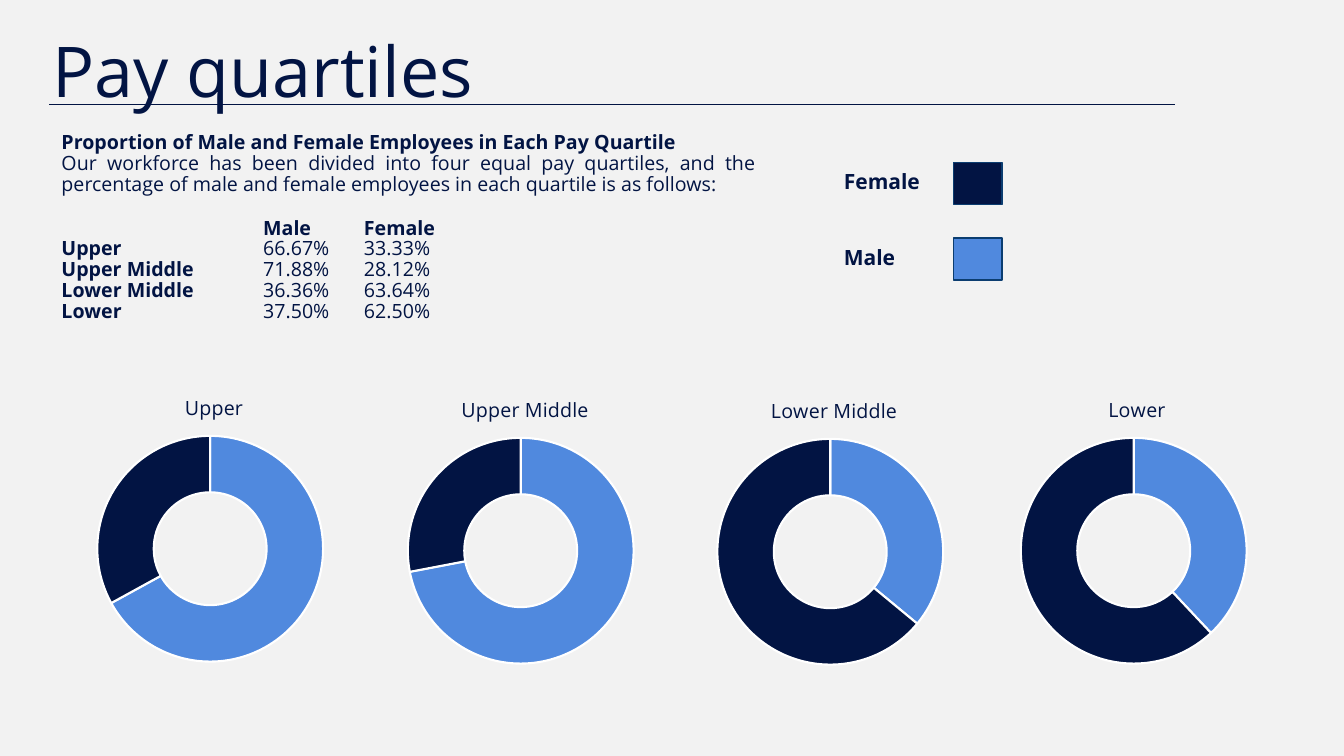
from lxml import etree
from pptx import Presentation
from pptx.chart.data import CategoryChartData
from pptx.dml.color import RGBColor
from pptx.enum.chart import XL_CHART_TYPE
from pptx.enum.shapes import MSO_CONNECTOR, MSO_SHAPE
from pptx.enum.text import MSO_ANCHOR, PP_ALIGN
from pptx.oxml.ns import qn
from pptx.util import Inches, Pt

NAVY = "021443"
BLUE = "5089DE"
FONT = "Open Sans"
CHART_WIDTH, CHART_HEIGHT, RING = 3.43, 3.02, 2.24


def color(value):
    return RGBColor.from_string(value)


def style(font, size, bold=False, name=FONT):
    font.name = name
    font.size = Pt(size)
    font.bold = bold
    font.color.rgb = color(NAVY)


def add_tabs(paragraph, stops):
    tabs = etree.SubElement(paragraph._p.get_or_add_pPr(), qn("a:tabLst"))
    for stop in stops:
        etree.SubElement(tabs, qn("a:tab"), pos=str(Inches(stop)), algn="l")


def add_text(slide, paragraphs, left, top, width, height, size=14, inset=0.12,
             align=PP_ALIGN.LEFT, anchor=MSO_ANCHOR.TOP, spacing=1.0,
             tabs=(), gaps=None):
    frame = slide.shapes.add_textbox(
        Inches(left), Inches(top), Inches(width), Inches(height)).text_frame
    frame.word_wrap = True
    frame.vertical_anchor = anchor
    frame.margin_left = frame.margin_right = Inches(inset)
    frame.margin_top = frame.margin_bottom = Inches(inset)
    for index, runs in enumerate(paragraphs):
        paragraph = frame.paragraphs[0] if index == 0 else frame.add_paragraph()
        if tabs:
            add_tabs(paragraph, tabs)
        paragraph.alignment = align
        paragraph.line_spacing = spacing
        if gaps and index in gaps:
            paragraph.space_before = Pt(gaps[index])
        for words, bold in runs:
            run = paragraph.add_run()
            run.text = words
            style(run.font, size, bold)


def add_rule(slide, left, right, y):
    rule = slide.shapes.add_connector(
        MSO_CONNECTOR.STRAIGHT, Inches(left), Inches(y), Inches(right), Inches(y))
    rule.line.color.rgb = color(NAVY)
    rule.line.width = Pt(0.5)
    etree.SubElement(rule._element.spPr, qn("a:effectLst"))


def add_legend_entry(slide, label, fill, top):
    add_text(slide, [[(label, True)]], 8.25, top - 0.02, 1.1, 0.42, size=15,
             anchor=MSO_ANCHOR.MIDDLE)
    swatch = slide.shapes.add_shape(
        MSO_SHAPE.RECTANGLE, Inches(9.46), Inches(top), Inches(0.48), Inches(0.42))
    swatch.shadow.inherit = False
    swatch.fill.solid()
    swatch.fill.fore_color.rgb = color(fill)
    swatch.line.color.rgb = color("0B3D70")
    swatch.line.width = Pt(1)


def set_layout(parent, index, target=None, **fractions):
    for old in parent.findall(qn("c:layout")):
        parent.remove(old)
    layout = etree.Element(qn("c:layout"))
    parent.insert(index, layout)
    manual = etree.SubElement(layout, qn("c:manualLayout"))
    if target:
        etree.SubElement(manual, qn("c:layoutTarget"), val=target)
    for axis in ("x", "y"):
        etree.SubElement(manual, qn(f"c:{axis}Mode"), val="edge")
    for key, value in fractions.items():
        etree.SubElement(manual, qn(f"c:{key}"), val=f"{value:.4f}")


def add_doughnut(slide, quartile, shares, left, top):
    data = CategoryChartData()
    data.categories = ["1", "2"]
    data.add_series("Series 1", shares)
    chart = slide.shapes.add_chart(
        XL_CHART_TYPE.DOUGHNUT, Inches(left), Inches(top),
        Inches(CHART_WIDTH), Inches(CHART_HEIGHT), data).chart
    style(chart.font, 10, name="Calibri")
    chart.has_legend = False
    chart.has_title = True
    title = chart.chart_title
    title.text_frame.text = quartile
    style(title.text_frame.paragraphs[0].runs[0].font, 14)
    title_width = 0.09 + 0.0964 * len(quartile)
    set_layout(title._element, 1,
               x=(1 - title_width / CHART_WIDTH) / 2, y=0.055)
    set_layout(chart._chartSpace.chart.plotArea, 0, target="inner",
               x=(1 - RING / CHART_WIDTH) / 2, y=0.21,
               w=RING / CHART_WIDTH, h=RING / CHART_HEIGHT)
    plot = chart.plots[0]
    plot.has_data_labels = False
    plot.vary_by_categories = True
    for index, fill in enumerate((BLUE, NAVY)):
        segment = plot.series[0].points[index].format
        segment.fill.solid()
        segment.fill.fore_color.rgb = color(fill)
        segment.line.color.rgb = color("FFFFFF")
        segment.line.width = Pt(1.5)


def main():
    deck = Presentation()
    deck.slide_width, deck.slide_height = Inches(13.33), Inches(7.5)
    slide = deck.slides.add_slide(deck.slide_layouts[6])
    slide.background.fill.solid()
    slide.background.fill.fore_color.rgb = color("F2F2F2")

    add_text(slide, [[("Pay quartiles", False)]], 0.42, 0.31, 11.73, 0.86,
             size=50, inset=0.1, anchor=MSO_ANCHOR.MIDDLE, spacing=0.9)
    add_rule(slide, 0.49, 11.65, 1.04)

    quartiles = [
        ("Upper", "66.67%", "33.33%", (67, 33), 0.37, 3.69),
        ("Upper Middle", "71.88%", "28.12%", (72, 28), 3.45, 3.71),
        ("Lower Middle", "36.36%", "63.64%", (36, 64), 6.52, 3.72),
        ("Lower", "37.50%", "62.50%", (38, 62), 9.53, 3.71),
    ]
    summary = [
        [("Proportion of Male and Female Employees in Each Pay Quartile", True)],
        [("Our workforce has been divided into four equal pay quartiles, and the "
          "percentage of male and female employees in each quartile is as follows:",
          False)],
        [("\tMale\tFemale", True)],
    ]
    for quartile, male, female, *_ in quartiles:
        summary.append([(quartile, True), (f"\t{male}\t{female}", False)])
    add_text(slide, summary, 0.49, 1.2, 7.13, 2.4, align=PP_ALIGN.JUSTIFY,
             spacing=0.88, tabs=(2, 3), gaps={2: 16.8})

    for quartile, _, _, shares, left, top in quartiles:
        add_doughnut(slide, quartile, shares, left, top)

    add_legend_entry(slide, "Female", NAVY, 1.61)
    add_legend_entry(slide, "Male", BLUE, 2.36)
    deck.save("out.pptx")


if __name__ == "__main__":
    main()
